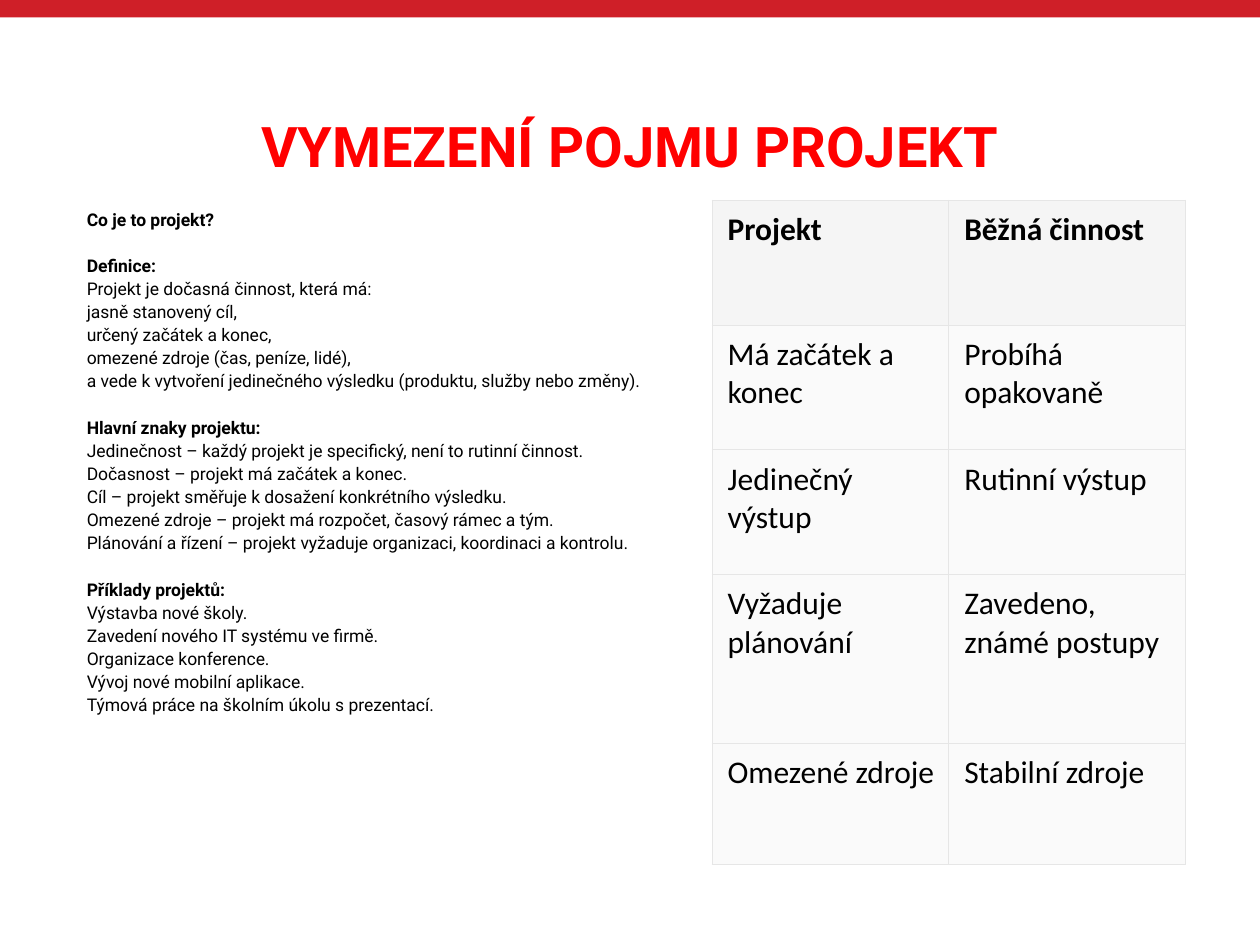
from dataclasses import dataclass

from lxml import etree
from pptx import Presentation
from pptx.dml.color import RGBColor
from pptx.enum.shapes import MSO_SHAPE
from pptx.enum.text import MSO_ANCHOR, MSO_AUTO_SIZE, PP_ALIGN
from pptx.oxml.ns import qn
from pptx.util import Pt

RECT = MSO_SHAPE.RECTANGLE
MIDDLE = MSO_ANCHOR.MIDDLE
NO_FIT = MSO_AUTO_SIZE.NONE
CENTER, JUSTIFY = PP_ALIGN.CENTER, PP_ALIGN.JUSTIFY

LEFT, WIDE = 42.5, 635
TOP = 114.5
LINE = 1.1
GAP = 13.2


@dataclass
class Block:
    head: str
    lines: tuple[str, ...] = ()


@dataclass
class Row:
    high: float
    cells: tuple[str, str]
    fill: str = "FAFAFA"
    bold: bool = False


BLOCKS = [
    Block("Co je to projekt?"),
    Block("Definice:", (
        "Projekt je dočasná činnost, která má:",
        "jasně stanovený cíl,",
        "určený začátek a konec,",
        "omezené zdroje (čas, peníze, lidé),",
        "a vede k vytvoření jedinečného výsledku (produktu, služby nebo změny).",
    )),
    Block("Hlavní znaky projektu:", (
        "Jedinečnost – každý projekt je specifický, není to rutinní činnost.",
        "Dočasnost – projekt má začátek a konec.",
        "Cíl – projekt směřuje k dosažení konkrétního výsledku.",
        "Omezené zdroje – projekt má rozpočet, časový rámec a tým.",
        "Plánování a řízení – projekt vyžaduje organizaci, koordinaci a kontrolu.",
    )),
    Block("Příklady projektů:", (
        "Výstavba nové školy.",
        "Zavedení nového IT systému ve firmě.",
        "Organizace konference.",
        "Vývoj nové mobilní aplikace.",
        "Týmová práce na školním úkolu s prezentací.",
    )),
]

ROWS = [
    Row(71.3, ("Projekt", "Běžná činnost"), "F5F5F5", True),
    Row(71.3, ("Má začátek a konec", "Probíhá opakovaně")),
    Row(71.3, ("Jedinečný výstup", "Rutinní výstup")),
    Row(96.3, ("Vyžaduje plánování", "Zavedeno, známé postupy")),
    Row(69.3, ("Omezené zdroje", "Stabilní zdroje")),
]


def color(code: str) -> RGBColor:
    return RGBColor.from_string(code)


def style(para, face: str, size: float, bold: bool, code: str = "000000") -> None:
    font = para.font
    font.name, font.size, font.bold = face, Pt(size), bold
    font.color.rgb = color(code)


def place(shape, left: float, top: float, width: float, high: float) -> None:
    shape.left, shape.top = Pt(left), Pt(top)
    shape.width, shape.height = Pt(width), Pt(high)


def edge(cell, code: str, width: float) -> None:
    props = cell._tc.get_or_add_tcPr()
    for spot, side in enumerate(("a:lnL", "a:lnR", "a:lnT", "a:lnB")):
        line = etree.Element(qn(side), w=str(Pt(width)))
        fill = etree.SubElement(line, qn("a:solidFill"))
        etree.SubElement(fill, qn("a:srgbClr"), val=code)
        props.insert(spot, line)


def draw_bar(slide) -> None:
    bar = slide.shapes.add_shape(RECT, 0, 0, Pt(720), Pt(10))
    bar.shadow.inherit = False
    bar.fill.solid()
    bar.fill.fore_color.rgb = color("CF1F28")
    bar.line.fill.background()


def draw_title(slide, text: str) -> None:
    title = slide.shapes.title
    place(title, LEFT, 29, WIDE, 104.5)
    frame = title.text_frame
    frame.text = text
    frame.auto_size = NO_FIT
    frame.vertical_anchor = MIDDLE
    para = frame.paragraphs[0]
    para.alignment, para.line_spacing = CENTER, LINE
    style(para, "Roboto", 32, True, "FF0000")


def draw_body(slide, blocks: list[Block]) -> None:
    box = slide.shapes.add_textbox(Pt(LEFT), Pt(TOP), Pt(WIDE), Pt(361.5))
    frame = box.text_frame
    frame.word_wrap = True
    for i, block in enumerate(blocks):
        for j, text in enumerate((block.head, *block.lines)):
            first = i == j == 0
            para = frame.paragraphs[0] if first else frame.add_paragraph()
            para.text = text
            para.alignment, para.line_spacing = JUSTIFY, LINE
            para.space_before = Pt(GAP if i and j == 0 else 0)
            style(para, "Roboto", 10, j == 0)


def draw_table(slide, rows: list[Row]) -> None:
    high = sum(row.high for row in rows)
    table = slide.shapes.add_table(
        len(rows), 2, Pt(407), Pt(TOP), Pt(270.5), Pt(high)).table
    table.horz_banding = False
    for col in table.columns:
        col.width = Pt(135.25)
    for r, row in enumerate(rows):
        table.rows[r].height = Pt(row.high)
        for c, text in enumerate(row.cells):
            cell = table.cell(r, c)
            cell.text = text
            cell.margin_left, cell.margin_right = Pt(8.8), Pt(5.8)
            cell.margin_top, cell.margin_bottom = Pt(5.8), Pt(5)
            cell.fill.solid()
            cell.fill.fore_color.rgb = color(row.fill)
            edge(cell, "E6E6E6", 0.75)
            style(cell.text_frame.paragraphs[0], "Calibri", 18, row.bold)


def main() -> None:
    deck = Presentation()
    deck.slide_width, deck.slide_height = Pt(720), Pt(540)
    slide = deck.slides.add_slide(deck.slide_layouts[5])
    # Top band and heading
    draw_bar(slide)
    draw_title(slide, "VYMEZENÍ POJMU PROJEKT")
    # Definition on the left, comparison on the right
    draw_body(slide, BLOCKS)
    draw_table(slide, ROWS)
    deck.save("out.pptx")


if __name__ == "__main__":
    main()
